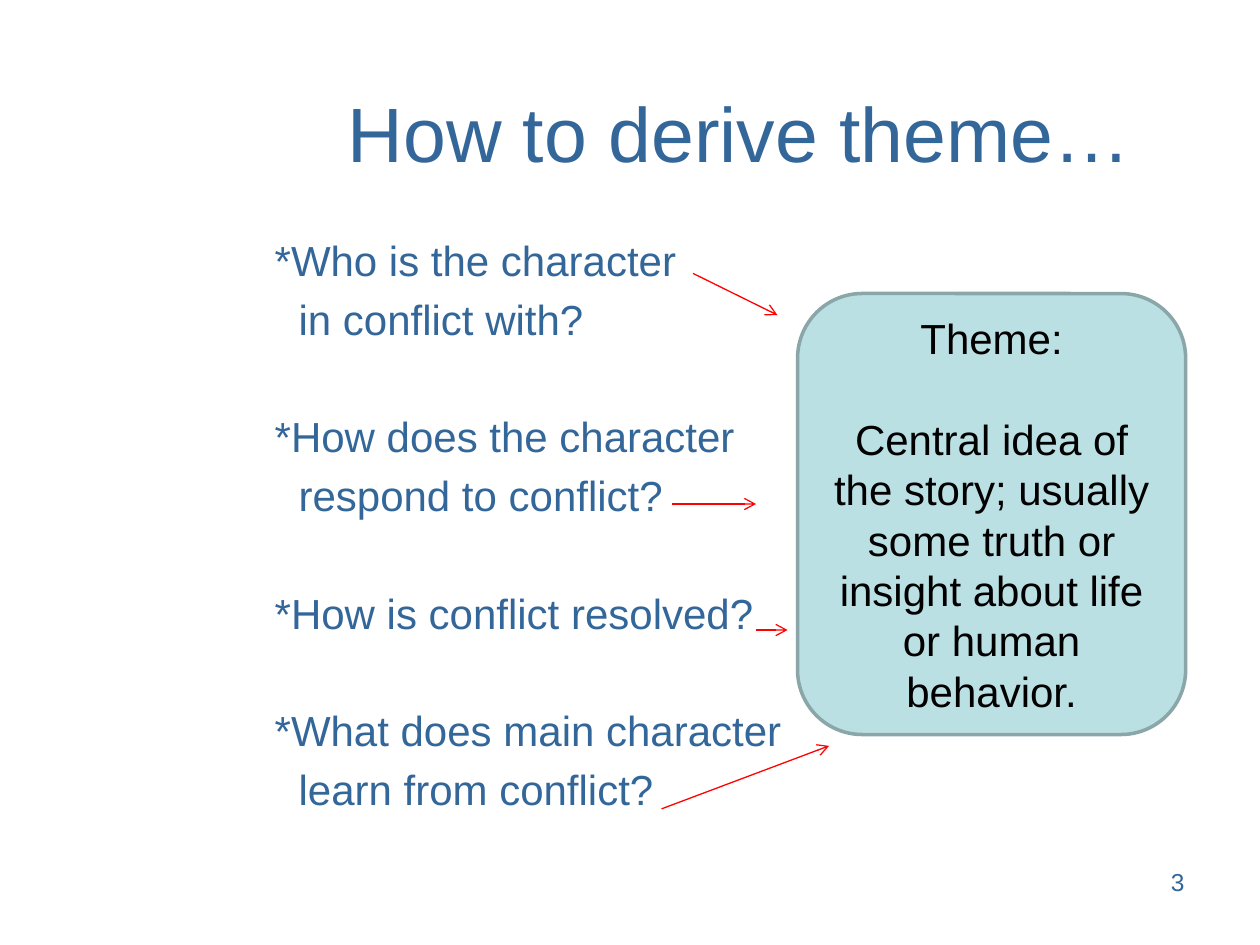
from lxml import etree
from pptx import Presentation
from pptx.dml.color import RGBColor
from pptx.enum.shapes import MSO_CONNECTOR, MSO_SHAPE
from pptx.enum.text import MSO_ANCHOR, MSO_AUTO_SIZE, PP_ALIGN
from pptx.oxml.ns import qn
from pptx.util import Inches, Pt

BLUE = "336699"
LINE_PITCH = 28.8
LINE_GAP = 4.8


def color(hex_value):
    return RGBColor.from_string(hex_value)


def format_text(para, size, hex_value, align):
    para.alignment = align
    for span in para.runs:
        span.font.name = "Arial"
        span.font.size = Pt(size)
        span.font.color.rgb = color(hex_value)


deck = Presentation()
deck.slide_width, deck.slide_height = Inches(10), Inches(7.5)
page = deck.slides.add_slide(deck.slide_layouts[1])

# Title
title = page.shapes.title
title.left, title.top = Inches(2.08), Inches(0.42)
title.width, title.height = Inches(7.58), Inches(1.25)
title.text_frame.text = "How to derive theme…"
title.text_frame.vertical_anchor = MSO_ANCHOR.MIDDLE
format_text(title.text_frame.paragraphs[0], 44, BLUE, PP_ALIGN.CENTER)

# Questions: a gap of one line before each, second lines indented
questions = [
    ["*Who is the character", "in conflict with?"],
    ["*How does the character", "respond to conflict?"],
    ["*How is conflict resolved?"],
    ["*What does main character", "learn from conflict?"],
]
body = page.placeholders[1]
body.left, body.top = Inches(2.08), Inches(1.81)
body.width, body.height = Inches(7.58), Inches(5.52)
frame = body.text_frame
frame.auto_size = MSO_AUTO_SIZE.NONE
for question_index, lines in enumerate(questions):
    for line_index, line in enumerate(lines):
        first = question_index == line_index == 0
        para = frame.paragraphs[0] if first else frame.add_paragraph()
        para.text = line
        para.line_spacing = Pt(LINE_PITCH)
        if first:
            para.space_before = Pt(0)
        elif line_index == 0:
            para.space_before = Pt(LINE_PITCH + 2 * LINE_GAP)
        else:
            para.space_before = Pt(LINE_GAP)
        properties = para._p.get_or_add_pPr()
        properties.set("marL", str(Inches(0.19 if line_index else 0)))
        properties.set("indent", "0")
        etree.SubElement(properties, qn("a:buNone"))
        format_text(para, 24, BLUE, PP_ALIGN.LEFT)

# Page number
number = page.shapes.add_textbox(Inches(7.17), Inches(6.83), Inches(2.33), Inches(0.52))
number.text_frame.word_wrap = True
number.text_frame.text = "3"
format_text(number.text_frame.paragraphs[0], 14, BLUE, PP_ALIGN.RIGHT)

# Theme box
theme = page.shapes.add_shape(
    MSO_SHAPE.ROUNDED_RECTANGLE, Inches(6.33), Inches(2.33), Inches(3.08), Inches(3.5))
theme.shadow.inherit = False
theme.fill.solid()
theme.fill.fore_color.rgb = color("BBE0E3")
theme.line.color.rgb = color("8AA6A8")
theme.line.width = Pt(2)
frame = theme.text_frame
frame.word_wrap = True
frame.vertical_anchor = MSO_ANCHOR.MIDDLE
frame.text = ("Theme:\nCentral idea of the story; usually some truth "
              "or insight about life or human behavior.")
for para in frame.paragraphs:
    para.line_spacing = Pt(LINE_PITCH)
    format_text(para, 24, "000000", PP_ALIGN.CENTER)
frame.paragraphs[1].space_before = Pt(LINE_PITCH)

# Arrows from the questions to the theme
arrows = [
    (5.5, 2.17, 6.17, 2.5),
    (5.33, 4, 6, 4),
    (6, 5, 6.25, 5),
    (5.25, 6.42, 6.58, 5.92),
]
for ends in arrows:
    arrow = page.shapes.add_connector(
        MSO_CONNECTOR.STRAIGHT, *[Inches(value) for value in ends])
    arrow.line.color.rgb = color("FF0000")
    arrow.line.width = Pt(0.75)
    etree.SubElement(arrow.line._get_or_add_ln(), qn("a:tailEnd"), type="arrow")
    etree.SubElement(arrow._element.spPr, qn("a:effectLst"))

deck.save("out.pptx")
